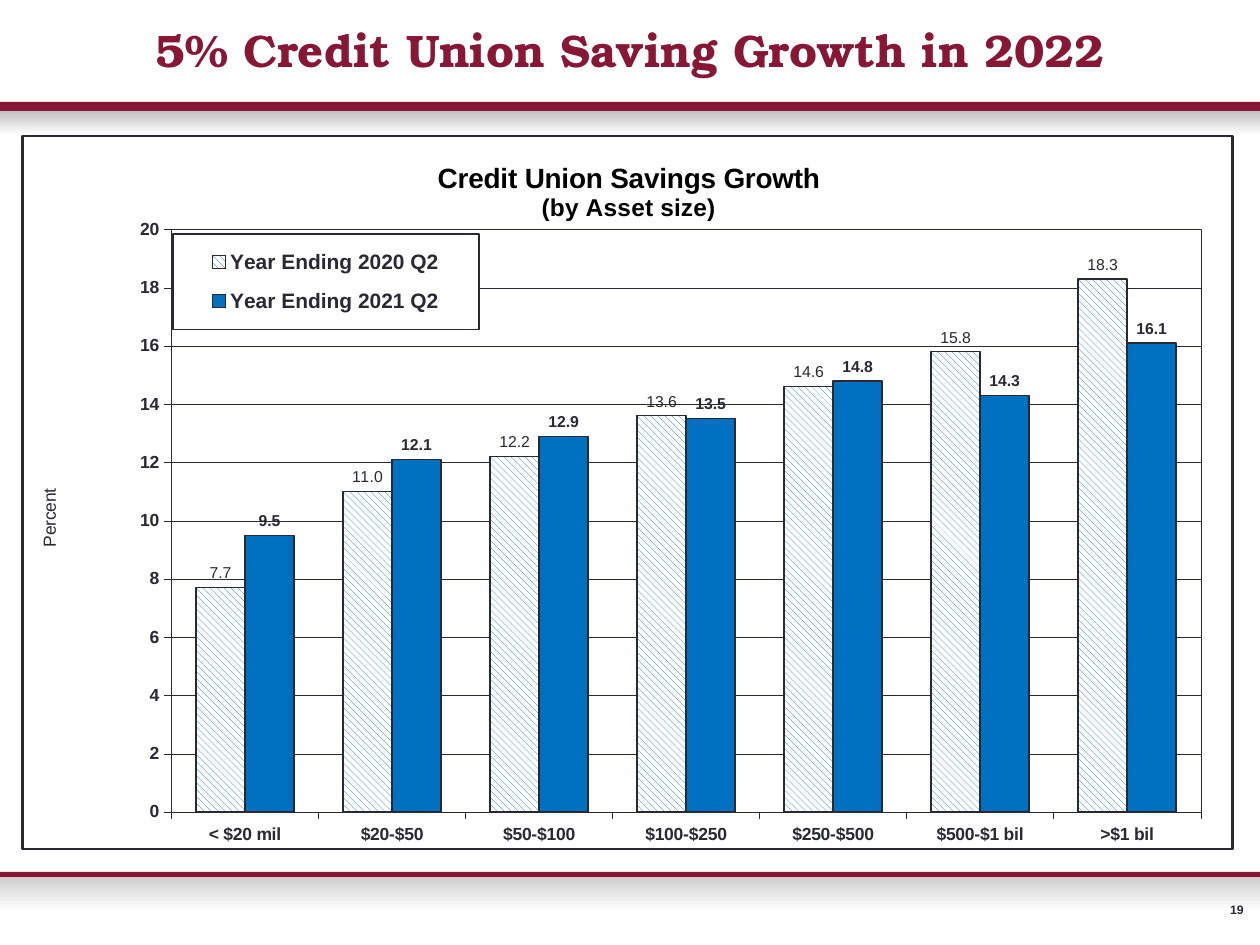
from lxml import etree
from pptx import Presentation
from pptx.chart.data import CategoryChartData
from pptx.dml.color import RGBColor
from pptx.enum.chart import XL_CHART_TYPE, XL_LABEL_POSITION, XL_LEGEND_POSITION, XL_TICK_MARK
from pptx.enum.dml import MSO_PATTERN
from pptx.enum.shapes import MSO_SHAPE
from pptx.enum.text import MSO_ANCHOR, MSO_AUTO_SIZE, PP_ALIGN
from pptx.oxml import parse_xml
from pptx.oxml.ns import qn
from pptx.util import Inches, Pt

COLORS = {
    "maroon": "881635", "ink": "292934", "blue": "0070C0", "white": "FFFFFF",
    "black": "000000", "grey": "C0C0C0", "light grey": "CFCFCF",
}
CHART_NS = "http://schemas.openxmlformats.org/drawingml/2006/chart"
DRAWING_NS = "http://schemas.openxmlformats.org/drawingml/2006/main"

CATEGORIES = ["< $20 mil", "$20-$50", "$50-$100", "$100-$250",
              "$250-$500", "$500-$1 bil", ">$1 bil"]
SAVINGS = {
    "Year Ending 2020 Q2": [7.7, 11, 12.2, 13.6, 14.6, 15.8, 18.3],
    "Year Ending 2021 Q2": [9.5, 12.1, 12.9, 13.5, 14.8, 14.3, 16.1],
}


def color(name):
    return RGBColor.from_string(COLORS[name])


def set_font(font, size, name="ink", bold=True, face="Arial"):
    font.size, font.bold, font.name = Pt(size), bold, face
    font.color.rgb = color(name)


def set_line(line, width):
    line.color.rgb = color("ink")
    line.width = Pt(width)


def set_layout(element, x, y, width=None, height=None, inner=False):
    """Place a chart part by fractions of the chart's size."""
    for old in element.findall(qn("c:layout")):
        element.remove(old)
    layout = etree.Element(qn("c:layout"))
    manual = etree.SubElement(layout, qn("c:manualLayout"))
    settings = [("xMode", "edge"), ("yMode", "edge"),
                ("x", x), ("y", y), ("w", width), ("h", height)]
    if inner:
        settings.insert(0, ("layoutTarget", "inner"))
    for tag, value in settings:
        if value is not None:
            etree.SubElement(manual, qn("c:" + tag)).set("val", str(value))
    position = 0
    for index, child in enumerate(element):
        if child.tag in (qn("c:tx"), qn("c:legendPos")):
            position = index + 1
    element.insert(position, layout)


def set_frame(element, width):
    """Give a chart part a white fill and a dark outline."""
    frame = parse_xml(
        f'<c:spPr xmlns:c="{CHART_NS}" xmlns:a="{DRAWING_NS}">'
        f'<a:solidFill><a:srgbClr val="{COLORS["white"]}"/></a:solidFill>'
        f'<a:ln w="{Pt(width)}"><a:solidFill><a:srgbClr val="{COLORS["ink"]}"/>'
        f'</a:solidFill></a:ln></c:spPr>')
    text_properties = element.find(qn("c:txPr"))
    if text_properties is None:
        element.append(frame)
    else:
        text_properties.addprevious(frame)


def add_band(page, top, bar_height, shade_height, shade):
    """A maroon bar with a shade fading out below it."""
    parts = [(top + bar_height, shade_height, shade), (top, bar_height, None)]
    for part_top, height, start in parts:
        band = page.shapes.add_shape(MSO_SHAPE.RECTANGLE, 0, Inches(part_top),
                                     Inches(10), Inches(height))
        band.shadow.inherit = False
        band.line.fill.background()
        if start:
            band.fill.gradient()
            band.fill.gradient_angle = 270
            for stop, name in zip(band.fill.gradient_stops, (start, "white")):
                stop.color.rgb = color(name)
        else:
            band.fill.solid()
            band.fill.fore_color.rgb = color("maroon")


def add_title(page, left, top, width, height):
    title = page.shapes.title
    title.left, title.top = Inches(left), Inches(top)
    title.width, title.height = Inches(width), Inches(height)
    frame = title.text_frame
    frame.auto_size = MSO_AUTO_SIZE.NONE
    frame.vertical_anchor = MSO_ANCHOR.MIDDLE
    para = frame.paragraphs[0]
    para.alignment = PP_ALIGN.CENTER
    span = para.add_run()
    span.text = "5% Credit Union Saving Growth in 2022"
    set_font(span.font, 26, "maroon", face="TeX Gyre Bonum")


def add_page_number(page, left, top, width, height):
    box = page.shapes.add_textbox(Inches(left), Inches(top), Inches(width), Inches(height))
    frame = box.text_frame
    frame.margin_left = frame.margin_right = frame.margin_top = frame.margin_bottom = 0
    frame.word_wrap = False
    frame.vertical_anchor = MSO_ANCHOR.MIDDLE
    para = frame.paragraphs[0]
    para.alignment = PP_ALIGN.RIGHT
    span = para.add_run()
    span.text = "19"
    set_font(span.font, 7)


def format_series(chart):
    plot = chart.plots[0]
    plot.gap_width, plot.overlap, plot.vary_by_categories = 100, 0, False
    for series, bold, number_format in zip(plot.series, (False, True), ("0.0", "#,##0.0")):
        series.invert_if_negative = False
        set_line(series.format.line, 0.73)
        labels = series.data_labels
        labels.show_value = True
        labels.position = XL_LABEL_POSITION.OUTSIDE_END
        labels.number_format, labels.number_format_is_linked = number_format, False
        set_font(labels.font, 9, bold=bold)
    earlier, later = (series.format.fill for series in plot.series)
    earlier.patterned()
    earlier.pattern = MSO_PATTERN.WIDE_DOWNWARD_DIAGONAL
    earlier.fore_color.rgb, earlier.back_color.rgb = color("blue"), color("white")
    later.solid()
    later.fore_color.rgb = color("blue")


def format_axes(chart):
    for axis in (chart.category_axis, chart.value_axis):
        axis.major_tick_mark, axis.minor_tick_mark = XL_TICK_MARK.OUTSIDE, XL_TICK_MARK.NONE
        set_font(axis.tick_labels.font, 10)
        set_line(axis.format.line, 0.18)
    values = chart.value_axis
    values.minimum_scale, values.maximum_scale, values.major_unit = 0, 20, 2
    set_line(values.major_gridlines.format.line, 0.18)
    span = values.axis_title.text_frame.paragraphs[0].add_run()
    span.text = "Percent"
    set_font(span.font, 10, bold=False)
    set_layout(values.axis_title._element, 0.01, 0.49)


def add_savings_chart(page, left, top, width, height):
    data = CategoryChartData()
    data.categories = CATEGORIES
    for name, values in SAVINGS.items():
        data.add_series(name, values)
    chart = page.shapes.add_chart(XL_CHART_TYPE.COLUMN_CLUSTERED, Inches(left), Inches(top),
                                  Inches(width), Inches(height), data).chart
    set_font(chart.font, 7.5)
    format_series(chart)
    format_axes(chart)

    # Heading in two lines
    frame = chart.chart_title.text_frame
    for index, (text, size) in enumerate([("Credit Union Savings Growth", 16),
                                          ("(by Asset size)", 14)]):
        para = frame.add_paragraph() if index else frame.paragraphs[0]
        para.alignment = PP_ALIGN.CENTER
        span = para.add_run()
        span.text = text
        set_font(span.font, size, "black")
    set_layout(chart.chart_title._element, 0.34, 0.03)

    # Legend inside the plot's upper left corner
    chart.has_legend = True
    legend = chart.legend
    legend.position, legend.include_in_layout = XL_LEGEND_POSITION.RIGHT, False
    set_font(legend.font, 12)
    set_layout(legend._element, 0.124, 0.137, 0.253, 0.134)
    set_frame(legend._element, 1)

    # Plot area and outer frame
    plot_area = chart._chartSpace.chart.plotArea
    set_layout(plot_area, 0.123, 0.131, 0.851, 0.817, inner=True)
    set_frame(plot_area, 0.18)
    set_frame(chart._chartSpace, 1.5)


def main():
    deck = Presentation()
    deck.slide_width, deck.slide_height = Inches(10), Inches(7.5)
    page = deck.slides.add_slide(deck.slide_layouts[5])
    add_band(page, 0.81, 0.07, 0.19, "grey")
    add_band(page, 6.92, 0.04, 0.27, "light grey")
    add_page_number(page, 9.75, 7.16, 0.12, 0.12)
    add_title(page, 0.17, 0.12, 9.67, 0.54)
    add_savings_chart(page, 0.17, 1.07, 9.62, 5.68)
    deck.save("out.pptx")


if __name__ == "__main__":
    main()
